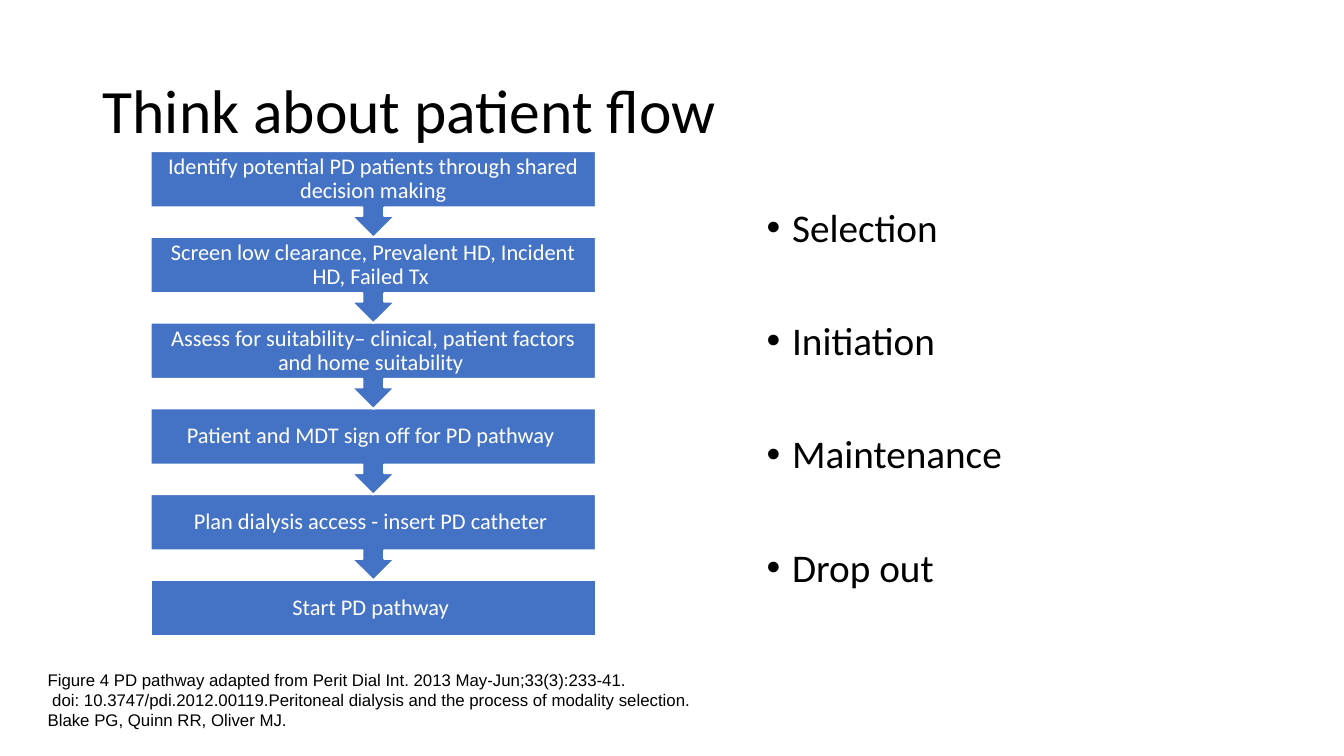
"""Build the patient flow slide for the peritoneal dialysis pathway."""
from pptx import Presentation
from pptx.dml.color import RGBColor
from pptx.enum import shapes, text
from pptx.util import Cm, Pt

STEPS = [
    "Identify potential PD patients through shared decision making",
    "Screen low clearance, Prevalent HD, Incident HD, Failed Tx ",
    "Assess for suitability– clinical, patient factors and home suitability ",
    "Patient and MDT sign off for PD pathway ",
    "Plan dialysis access - insert PD catheter ",
    "Start PD pathway ",
]
STAGES = ["Selection", "Initiation", "Maintenance", "Drop out"]
SOURCE = [
    "Figure 4 PD pathway adapted from Perit Dial Int. 2013 May-Jun;33(3):233-41.",
    " doi: 10.3747/pdi.2012.00119.Peritoneal dialysis and the process of modality selection.",
    "Blake PG, Quinn RR, Oliver MJ.",
]
LEFT, TOP, WIDTH, BOX, CALL, PITCH = 2.85, 2.86, 8.41, 1.07, 1.63, 1.62


def color(code):
    return RGBColor.from_string(code)


class Deck:
    blue, white, black = "4472C4", "FFFFFF", "000000"
    font = "Calibri"

    def __init__(self):
        self.prs = Presentation()
        self.prs.slide_width, self.prs.slide_height = Cm(25.4), Cm(14.29)
        self.slide = self.prs.slides.add_slide(self.prs.slide_layouts[1])

    def place(self, item, area):
        item.left, item.top, item.width, item.height = map(Cm, area)

    def style(self, shape, lines, size, tint, font=None, align=text.PP_ALIGN.LEFT,
              anchor=text.MSO_ANCHOR.MIDDLE, pad=(0.19, 0.1), lead=0.9, wrap=True):
        frame = shape.text_frame
        frame.text = "\n".join(lines)
        frame.word_wrap, frame.vertical_anchor = wrap, anchor
        frame.auto_size = text.MSO_AUTO_SIZE.NONE
        frame.margin_left = frame.margin_right = Cm(pad[0])
        frame.margin_top = frame.margin_bottom = Cm(pad[1])
        for par in frame.paragraphs:
            par.alignment, par.line_spacing = align, lead
            par.font.size, par.font.name = Pt(size), font or self.font
            par.font.color.rgb = color(tint)
        return frame

    def title(self, line, area):
        item = self.slide.shapes.title
        self.place(item, area)
        self.style(item, [line], 33, self.black)

    def bullets(self, lines, area):
        item = self.slide.placeholders[1]
        self.place(item, area)
        frame = self.style(item, lines, 21, self.black, anchor=text.MSO_ANCHOR.TOP)
        for num, par in enumerate(frame.paragraphs):
            par.space_before = Pt(38 if num else 7.5)
            props = par._p.get_or_add_pPr()
            props.set("marL", str(Cm(0.48)))
            props.set("indent", str(-Cm(0.48)))

    def block(self, kind, area, turn=0):
        item = self.slide.shapes.add_shape(kind, *map(Cm, area))
        item.shadow.inherit = False
        item.rotation = turn
        item.fill.solid()
        item.fill.fore_color.rgb = color(self.blue)
        item.line.color.rgb = color(self.white)
        item.line.width = Pt(1)

    def label(self, lines, area, size, tint, **look):
        item = self.slide.shapes.add_textbox(*map(Cm, area))
        return self.style(item, lines, size, tint, **look)

    def step(self, line, top, last):
        kind = shapes.MSO_SHAPE
        if last:
            self.block(kind.RECTANGLE, (LEFT, top, WIDTH, BOX))
        else:
            self.block(kind.UP_ARROW_CALLOUT, (LEFT, top, WIDTH, CALL), 180)
        self.label([line], (LEFT, top, WIDTH, BOX), 12, self.white,
                   align=text.PP_ALIGN.CENTER, pad=(0.23, 0.23))


def main():
    deck = Deck()
    deck.title("Think about patient flow", (1.75, 0.76, 21.9, 2.77))
    deck.bullets(STAGES, (14.3, 3.84, 10.8, 9.07))
    end = len(STEPS) - 1
    for num in range(end, -1, -1):
        deck.step(STEPS[num], TOP + num * PITCH, num == end)
    note = deck.label(SOURCE, (0.71, 12.55, 12.75, 1.35), 9, deck.black,
                      font="Arial", lead=1.0, wrap=False)
    note.auto_size = text.MSO_AUTO_SIZE.SHAPE_TO_FIT_TEXT
    deck.prs.save("out.pptx")


if __name__ == "__main__":
    main()
